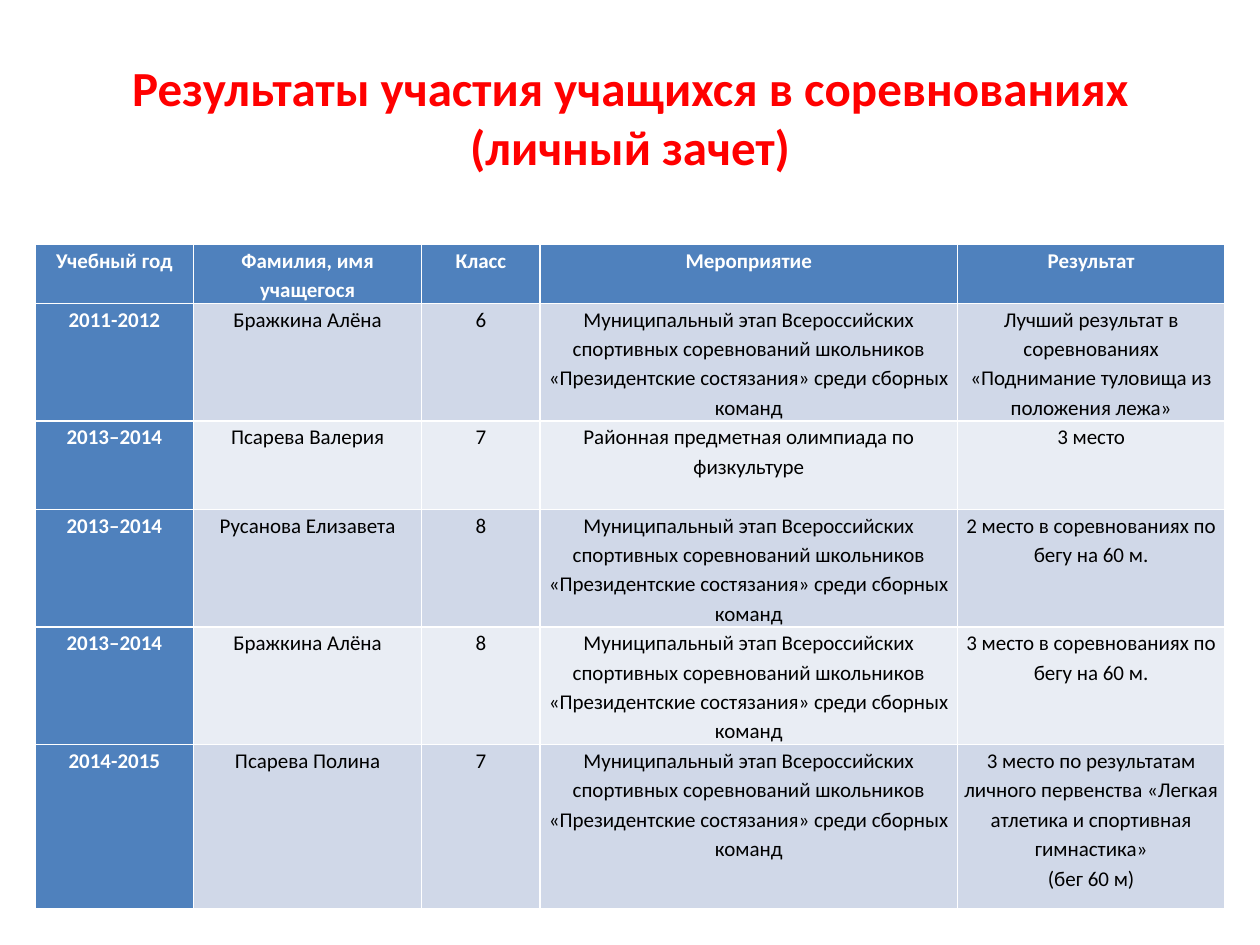
from pptx import Presentation
from pptx.dml.color import RGBColor
from pptx.enum.text import MSO_ANCHOR, PP_ALIGN
from pptx.util import Pt

FONT = "Calibri"
RED = RGBColor(0xFF, 0x00, 0x00)
WHITE = RGBColor(0xFF, 0xFF, 0xFF)
BLACK = RGBColor(0x00, 0x00, 0x00)
BLUE = RGBColor(0x4F, 0x81, 0xBD)
BANDS = (RGBColor(0xD0, 0xD8, 0xE8), RGBColor(0xE9, 0xED, 0xF4))

TITLE = "Результаты участия учащихся в соревнованиях (личный зачет)"
GAMES = ("Муниципальный этап Всероссийских спортивных соревнований школьников "
         "«Президентские состязания» среди сборных команд")
# Each line of a cell's text is one paragraph.
ROWS = [
    ("Учебный год", "Фамилия, имя\nучащегося", "Класс", "Мероприятие", "Результат"),
    ("2011-2012", "Бражкина Алёна", "6", GAMES,
     "Лучший результат в соревнованиях «Поднимание туловища из положения лежа»"),
    ("2013–2014", "Псарева Валерия", "7",
     "Районная предметная олимпиада по физкультуре", "3 место"),
    ("2013–2014", "Русанова Елизавета", "8", GAMES,
     "2 место в соревнованиях по бегу на 60 м."),
    ("2013–2014", "Бражкина Алёна", "8", GAMES,
     "3 место в соревнованиях по бегу на 60 м."),
    ("2014-2015", "Псарева Полина", "7", GAMES,
     "3 место по результатам личного первенства «Легкая атлетика "
     "и спортивная гимнастика»\n(бег 60 м)"),
]
COL_WIDTHS = (90.7, 130.3, 67.7, 238.5, 152.8)
ROW_HEIGHTS = (33.2, 67.2, 50.4, 67.2, 67.2, 93.6)
TABLE_LEFT, TABLE_TOP = 20, 139.7


def add_text(p, text, size, color, bold):
    p.alignment = PP_ALIGN.CENTER
    r = p.add_run()
    r.text = text
    r.font.name = FONT
    r.font.size = Pt(size)
    r.font.bold = bold
    r.font.color.rgb = color


def fill_cell(cell, text, fill, color, bold):
    cell.fill.solid()
    cell.fill.fore_color.rgb = fill
    cell.margin_left = cell.margin_right = Pt(3.6)
    cell.margin_top = cell.margin_bottom = Pt(0)
    tf = cell.text_frame
    for i, line in enumerate(text.split("\n")):
        p = tf.add_paragraph() if i else tf.paragraphs[0]
        p.line_spacing = 1.15
        add_text(p, line, 12, color, bold)


def add_results_table(s):
    table = s.shapes.add_table(
        len(ROWS), len(COL_WIDTHS), Pt(TABLE_LEFT), Pt(TABLE_TOP),
        Pt(sum(COL_WIDTHS)), Pt(sum(ROW_HEIGHTS))).table
    table.first_col = True
    for column, width in zip(table.columns, COL_WIDTHS):
        column.width = Pt(width)
    for i, (row, height) in enumerate(zip(table.rows, ROW_HEIGHTS)):
        row.height = Pt(height)
        for j, text in enumerate(ROWS[i]):
            heading = i == 0 or j == 0
            fill = BLUE if heading else BANDS[(i - 1) % 2]
            fill_cell(table.cell(i, j), text, fill, WHITE if heading else BLACK, heading)


def main():
    prs = Presentation()
    prs.slide_width, prs.slide_height = Pt(720), Pt(540)
    s = prs.slides.add_slide(prs.slide_layouts[5])

    title = s.shapes.title
    title.left, title.top, title.width, title.height = Pt(36), Pt(21.6), Pt(648), Pt(90)
    tf = title.text_frame
    tf.word_wrap = True
    tf.vertical_anchor = MSO_ANCHOR.MIDDLE
    add_text(tf.paragraphs[0], TITLE, 28, RED, True)

    add_results_table(s)
    prs.save("out.pptx")


if __name__ == "__main__":
    main()
